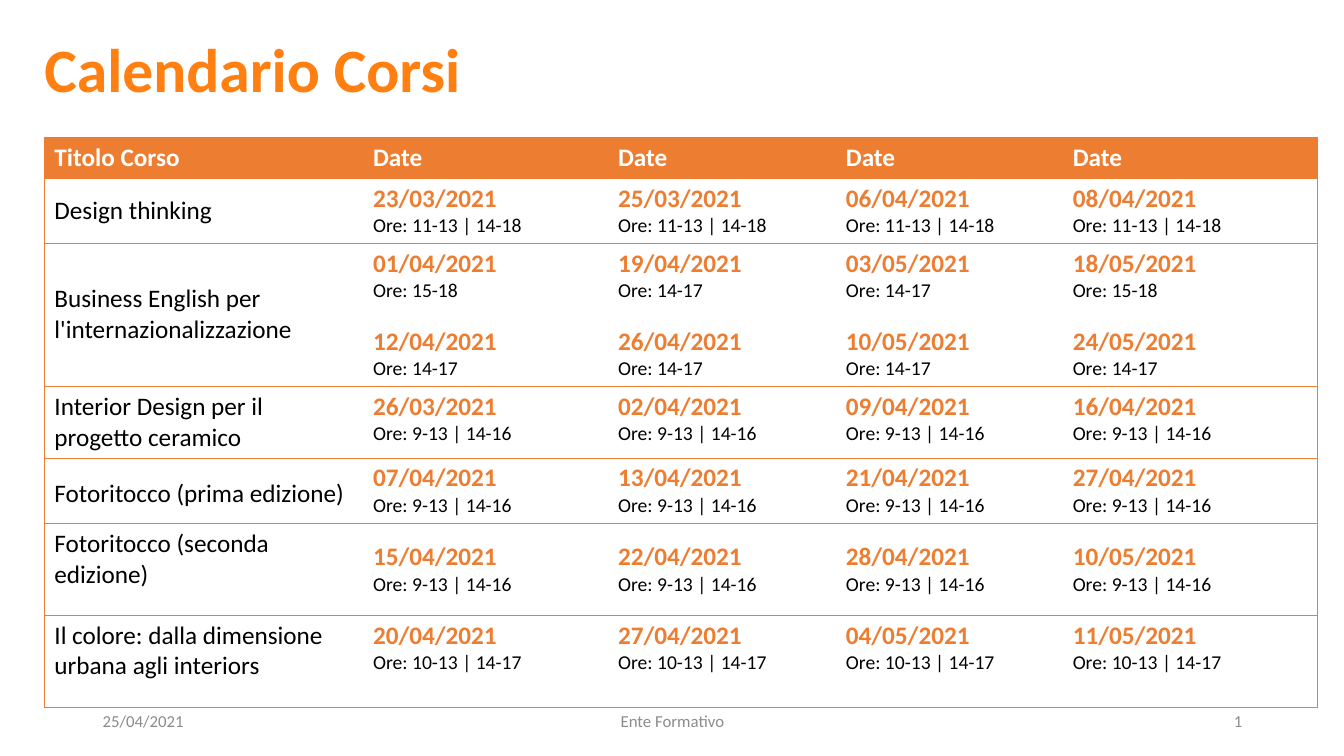
"""Build the course calendar slide."""
import itertools

import pptx
import pptx.dml.color
import pptx.enum.text
import pptx.oxml.ns
import pptx.util
from lxml import etree

Inches = pptx.util.Inches
Pt = pptx.util.Pt
RGBColor = pptx.dml.color.RGBColor
ALIGN = pptx.enum.text.PP_ALIGN
ANCHOR = pptx.enum.text.MSO_ANCHOR

TITLE_ORANGE = RGBColor(0xFF, 0x7F, 0x10)
ORANGE = RGBColor(0xED, 0x7D, 0x31)
WHITE = RGBColor(0xFF, 0xFF, 0xFF)
BLACK = RGBColor(0, 0, 0)
GRAY = RGBColor(0x8C, 0x8C, 0x8C)

FONT = "Calibri"
PLAIN_STYLE = "{2D5ABB26-0587-4C30-8999-92F81FD0307C}"
TABLE_LEFT, TABLE_TOP = 0.44, 1.36
COLUMNS = [3.16, 2.43, 2.26, 2.25, 2.53]
ROWS = [0.41, 0.64, 1.42, 0.7, 0.65, 0.91, 0.91]
FOOTER_LEFT, FOOTER_TOP, FOOTER_HEIGHT, FOOTER_GAP = 0.92, 6.95, 0.4, 0.5

HEADER = ["Titolo Corso"] + ["Date"] * 4
MORNING, LONG_DAY, SHORT_DAY = "11-13 | 14-18", "10-13 | 14-17", "9-13 | 14-16"
EARLY, LATE = "14-17", "15-18"


def sessions(hours, *dates):
    """Give each date its own cell, all with the same hours."""
    return [[(date, hours)] for date in dates]


COURSES = [
    ("Design thinking",
     sessions(MORNING, "23/03/2021", "25/03/2021", "06/04/2021", "08/04/2021")),
    ("Business English per l'internazionalizzazione",
     [[("01/04/2021", LATE), ("12/04/2021", EARLY)],
      [("19/04/2021", EARLY), ("26/04/2021", EARLY)],
      [("03/05/2021", EARLY), ("10/05/2021", EARLY)],
      [("18/05/2021", LATE), ("24/05/2021", EARLY)]]),
    ("Interior Design per il progetto ceramico",
     sessions(SHORT_DAY, "26/03/2021", "02/04/2021", "09/04/2021", "16/04/2021")),
    ("Fotoritocco (prima edizione)",
     sessions(SHORT_DAY, "07/04/2021", "13/04/2021", "21/04/2021", "27/04/2021")),
    ("Fotoritocco (seconda edizione)",
     sessions(SHORT_DAY, "15/04/2021", "22/04/2021", "28/04/2021", "10/05/2021")),
    ("Il colore: dalla dimensione urbana agli interiors",
     sessions(LONG_DAY, "20/04/2021", "27/04/2021", "04/05/2021", "11/05/2021")),
]
MIDDLE_TITLES = {1, 2}
MIDDLE_DATES = {5}
LOOSE_TITLE = 4


def write(paragraph, text, size, color, bold=False):
    """Fill a paragraph with text in one font."""
    paragraph.text = text
    font = paragraph.font
    font.name, font.size, font.bold = FONT, Pt(size), bold
    font.color.rgb = color


def add_border(cell, sides):
    """Draw thin orange lines on the named sides and none on the others."""
    properties = cell._tc.get_or_add_tcPr()
    qn = pptx.oxml.ns.qn
    for side in "LRTB":
        line = etree.SubElement(properties, qn(f"a:ln{side}"), w=str(Pt(0.5)))
        if side in sides:
            fill = etree.SubElement(line, qn("a:solidFill"))
            etree.SubElement(fill, qn("a:srgbClr"), val=str(ORANGE))
        else:
            etree.SubElement(line, qn("a:noFill"))


def write_sessions(cell, entries):
    """List dates with their hours, with a gap between sessions."""
    frame = cell.text_frame
    for index, (date, hours) in enumerate(entries):
        paragraph = frame.add_paragraph() if index else frame.paragraphs[0]
        write(paragraph, date, 18, ORANGE, True)
        if index:
            paragraph.space_before = Pt(17)
        write(frame.add_paragraph(), f"Ore: {hours}", 14, BLACK)


def add_title(page, text):
    """Place and format the slide title."""
    title = page.shapes.title
    title.left, title.top = Inches(0.34), Inches(-0.01)
    title.width, title.height = Inches(11.82), Inches(1.45)
    frame = title.text_frame
    frame.vertical_anchor = ANCHOR.MIDDLE
    paragraph = frame.paragraphs[0]
    write(paragraph, text, 44, TITLE_ORANGE, True)
    paragraph.alignment = ALIGN.LEFT
    paragraph.line_spacing = 0.9


def add_calendar(page):
    """Add the table of courses and dates."""
    table = page.shapes.add_table(
        len(ROWS), len(COLUMNS), Inches(TABLE_LEFT), Inches(TABLE_TOP),
        Inches(sum(COLUMNS)), Inches(sum(ROWS))).table
    table.horz_banding = False
    table._tbl.tblPr.find(pptx.oxml.ns.qn("a:tableStyleId")).text = PLAIN_STYLE
    for column, width in zip(table.columns, COLUMNS):
        column.width = Inches(width)
    for row, height in zip(table.rows, ROWS):
        row.height = Inches(height)

    last = len(COLUMNS) - 1
    for row, column in itertools.product(range(len(ROWS)), range(len(COLUMNS))):
        cell = table.cell(row, column)
        add_border(cell, "TB" + {0: "L", last: "R"}.get(column, ""))
        if row == 0:
            cell.fill.solid()
            cell.fill.fore_color.rgb = ORANGE
            write(cell.text_frame.paragraphs[0], HEADER[column], 18, WHITE, True)
            continue
        cell.fill.background()
        course, dates = COURSES[row - 1]
        if column == 0:
            write(cell.text_frame.paragraphs[0], course, 18, BLACK)
        else:
            write_sessions(cell, dates[column - 1])
        if row in (MIDDLE_DATES if column else MIDDLE_TITLES):
            cell.vertical_anchor = ANCHOR.MIDDLE
    table.cell(LOOSE_TITLE, 0).text_frame.paragraphs[0].line_spacing = 1.5


def add_footer(page):
    """Add the date, the organiser and the page number along the bottom."""
    left = FOOTER_LEFT
    for text, width, alignment in [("25/04/2021", 3, ALIGN.LEFT),
                                   ("Ente Formativo", 4.5, ALIGN.CENTER),
                                   ("1", 3, ALIGN.RIGHT)]:
        box = page.shapes.add_textbox(Inches(left), Inches(FOOTER_TOP),
                                      Inches(width), Inches(FOOTER_HEIGHT))
        frame = box.text_frame
        frame.word_wrap = True
        frame.vertical_anchor = ANCHOR.MIDDLE
        write(frame.paragraphs[0], text, 12, GRAY)
        frame.paragraphs[0].alignment = alignment
        left += width + FOOTER_GAP


def main():
    """Build and save the deck."""
    deck = pptx.Presentation()
    deck.slide_width, deck.slide_height = Inches(13.33), Inches(7.5)
    page = deck.slides.add_slide(deck.slide_layouts.get_by_name("Title Only"))
    add_title(page, "Calendario Corsi")
    add_calendar(page)
    add_footer(page)
    deck.save("out.pptx")


if __name__ == "__main__":
    main()
